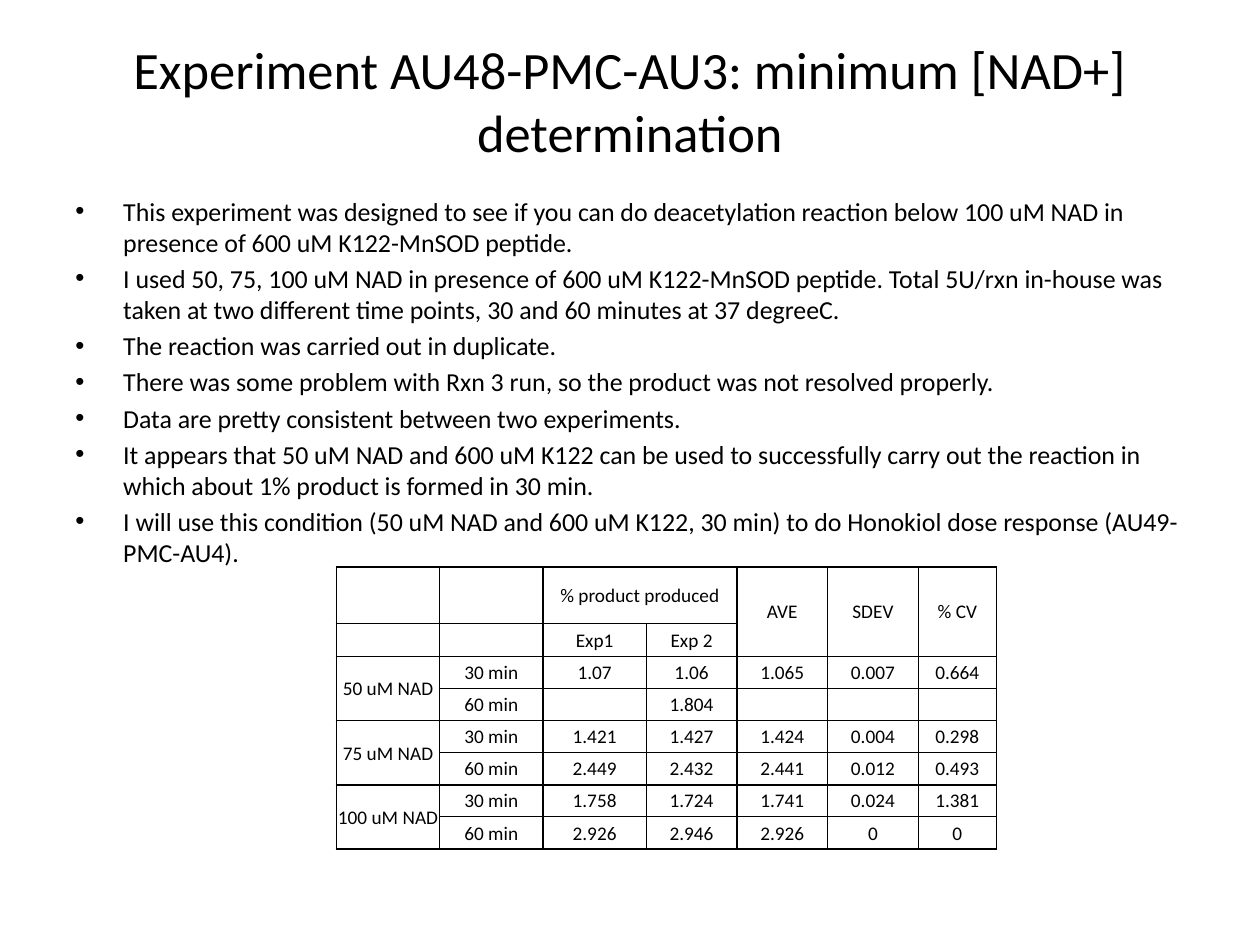
from pptx import Presentation, util as u
from pptx.dml import color
from pptx.enum import text
from pptx.oxml import ns
from lxml import etree

# Content
TITLE = "Experiment AU48-PMC-AU3: minimum [NAD+] determination"
NOTES = [
    "This experiment was designed to see if you can do deacetylation reaction below 100 uM NAD in presence of 600 uM K122-MnSOD peptide.",
    "I used 50, 75, 100 uM NAD in presence of 600 uM K122-MnSOD peptide. Total 5U/rxn in-house was taken at two different time points, 30 and 60 minutes at 37 degreeC.",
    "The reaction was carried out in duplicate.",
    "There was some problem with Rxn 3 run, so the product was not resolved properly.",
    "Data are pretty consistent between two experiments.",
    "It appears that 50 uM NAD and 600 uM K122 can be used to successfully carry out the reaction in which about 1% product is formed in 30 min.",
    "I will use this condition (50 uM NAD and 600 uM K122, 30 min) to do Honokiol dose response (AU49-PMC-AU4).",
]
ROWS = [
    ("", "", "% product produced", "", "AVE", "SDEV", "% CV"),
    ("", "", "Exp1", "Exp 2", "", "", ""),
    ("50 uM NAD", "30 min", "1.07", "1.06", "1.065", "0.007", "0.664"),
    ("", "60 min", "", "1.804", "", "", ""),
    ("75 uM NAD", "30 min", "1.421", "1.427", "1.424", "0.004", "0.298"),
    ("", "60 min", "2.449", "2.432", "2.441", "0.012", "0.493"),
    ("100 uM NAD", "30 min", "1.758", "1.724", "1.741", "0.024", "1.381"),
    ("", "60 min", "2.926", "2.946", "2.926", "0", "0"),
]
# Merged cells: (row, column) -> (rows, columns)
SPANS = {(0, 2): (1, 2), **{(0, c): (2, 1) for c in (4, 5, 6)},
         **{(r, 0): (2, 1) for r in (2, 4, 6)}}

# Theme and grid
THEME = dict(font="Calibri", ink="000000", title=30, body=14.8, cell=11,
             thin=0.5, thick=1)
WIDE, HIGH = 10, 7.5
EDGE = WIDE * 0.05
COLS = [0.82] * 3 + [0.72] * 3 + [0.62]
TALL = [0.45, 0.26] + [0.25, 0.26] * 3
BARS = {"col": (0, 2, 4, 7), "row": (0, 2, 4, 6, 8)}  # thick grid lines


def write(par, words, size):
    run = par.add_run()
    run.text = words
    run.font.name = THEME["font"]
    run.font.size = u.Pt(size)
    run.font.color.rgb = color.RGBColor.from_string(THEME["ink"])


def add_box(slide, top, high):
    box = slide.shapes.add_textbox(*map(u.Inches, (EDGE, top, WIDE - 2 * EDGE, high)))
    box.text_frame.word_wrap = True
    return box.text_frame


def add_bullet(par):
    par.space_before = u.Pt(THEME["body"] * 0.2)
    props = par._p.get_or_add_pPr()
    props.set("marL", str(u.Inches(0.38)))
    props.set("indent", str(-u.Inches(0.38)))
    etree.SubElement(props, ns.qn("a:buFont"), typeface="Arial")
    etree.SubElement(props, ns.qn("a:buChar"), char="•")


def add_edges(cell, row, col, high, wide):
    props = cell._tc.get_or_add_tcPr()
    for side, axis, pos in (("L", "col", col), ("R", "col", col + wide),
                            ("T", "row", row), ("B", "row", row + high)):
        width = THEME["thick" if pos in BARS[axis] else "thin"]
        line = etree.SubElement(props, ns.qn("a:ln" + side), w=str(u.Pt(width)))
        fill = etree.SubElement(line, ns.qn("a:solidFill"))
        etree.SubElement(fill, ns.qn("a:srgbClr"), val=THEME["ink"])


def fill_cell(cell, words):
    cell.margin_left = cell.margin_right = cell.margin_top = u.Inches(0.01)
    cell.margin_bottom = 0
    cell.vertical_anchor = text.MSO_ANCHOR.MIDDLE
    cell.fill.background()
    par = cell.text_frame.paragraphs[0]
    par.alignment = text.PP_ALIGN.CENTER
    if words:
        write(par, words, THEME["cell"])
    else:  # keeps an empty row from growing
        etree.SubElement(par._p, ns.qn("a:endParaRPr"), sz=str(THEME["cell"] * 100))


def add_grid(slide):
    frame = slide.shapes.add_table(
        len(ROWS), len(COLS), *map(u.Inches, (2.67, HIGH * 0.6, sum(COLS), sum(TALL))))
    table = frame.table
    table.first_row = table.horz_banding = False
    for col, wide in zip(table.columns, COLS):
        col.width = u.Inches(wide)
    for row, high in zip(table.rows, TALL):
        row.height = u.Inches(high)
    for r, line in enumerate(ROWS):
        for c, words in enumerate(line):
            cell = table.cell(r, c)
            high, wide = SPANS.get((r, c), (1, 1))
            add_edges(cell, r, c, high, wide)
            fill_cell(cell, words)
    for (r, c), (high, wide) in SPANS.items():
        table.cell(r, c).merge(table.cell(r + high - 1, c + wide - 1))


def main():
    deck = Presentation()
    deck.slide_width, deck.slide_height = u.Inches(WIDE), u.Inches(HIGH)
    slide = deck.slides.add_slide(deck.slide_layouts[6])

    # Title
    head = add_box(slide, 0.17, 1.25)
    head.vertical_anchor = text.MSO_ANCHOR.MIDDLE
    head.paragraphs[0].alignment = text.PP_ALIGN.CENTER
    write(head.paragraphs[0], TITLE, THEME["title"])

    # Bullets
    body = add_box(slide, HIGH * 0.2, 2.92)
    for i, note in enumerate(NOTES):
        par = body.add_paragraph() if i else body.paragraphs[0]
        add_bullet(par)
        write(par, note, THEME["body"])

    # Results
    add_grid(slide)
    deck.save("out.pptx")


if __name__ == "__main__":
    main()
